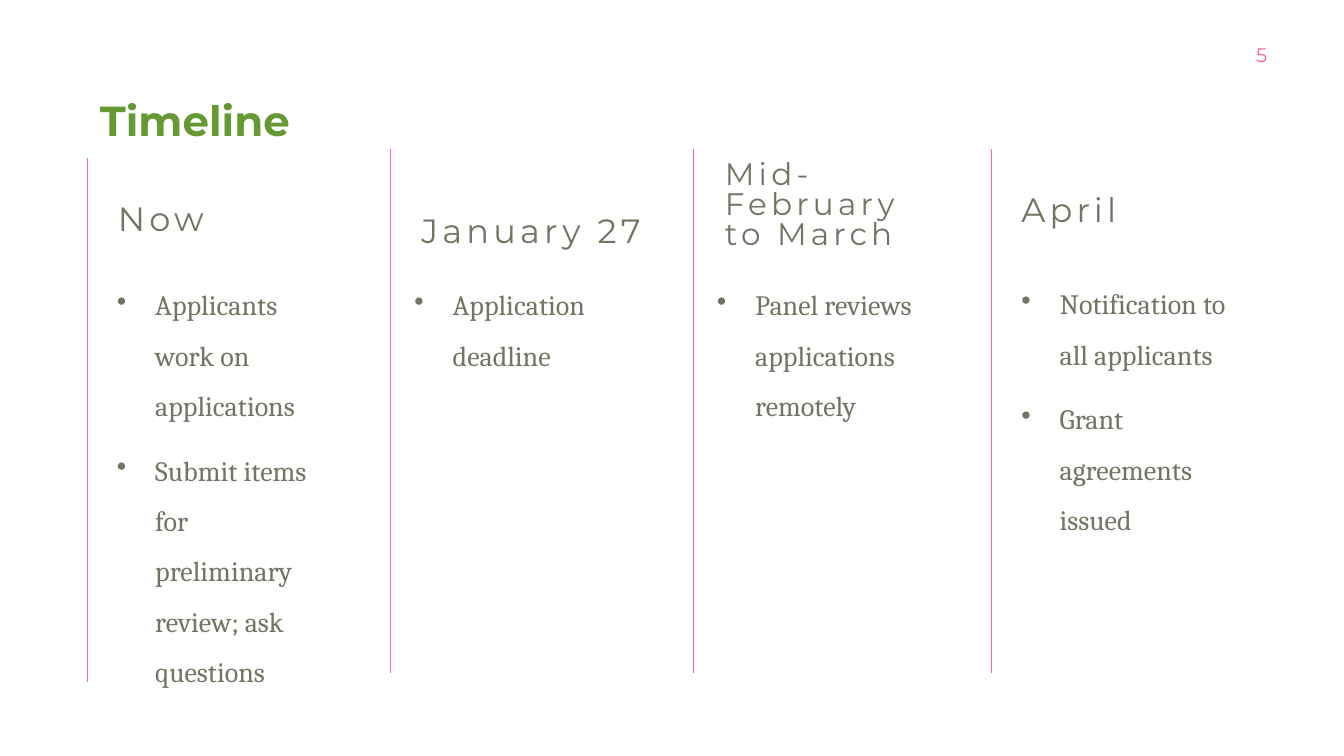
from lxml.etree import SubElement
from pptx import Presentation
from pptx.dml.color import RGBColor
from pptx.enum.shapes import MSO_CONNECTOR
from pptx.enum.text import MSO_ANCHOR, MSO_AUTO_SIZE, PP_ALIGN
from pptx.oxml.ns import qn
from pptx.util import Inches, Pt

GREEN, PINK, ROSE, OLIVE = "669933", "FF6699", "F06698", "747464"
TOP, LIST_TOP, RULE_HEIGHT = 1.48, 2.59, 5.2


def style(paragraph, font, size, color, spacing=None, before=None):
    paragraph.font.name = font
    paragraph.font.size = Pt(size)
    paragraph.font.color.rgb = RGBColor.from_string(color)
    paragraph.line_spacing = spacing
    if before is not None:
        paragraph.space_before = Pt(before)


def add_text(left, top, width, height, inset=(0.2, 0.1)):
    frame = slide.shapes.add_textbox(
        Inches(left), Inches(top), Inches(width), Inches(height)).text_frame
    frame.word_wrap = True
    frame.margin_left = frame.margin_right = Inches(inset[0])
    frame.margin_top = frame.margin_bottom = Inches(inset[1])
    return frame


prs = Presentation()
prs.slide_width, prs.slide_height = Inches(13.33), Inches(7.5)
slide = prs.slides.add_slide(prs.slide_layouts[5])

# Title
title = slide.shapes.title
title.left, title.top = Inches(0.89), Inches(0.49)
title.width, title.height = Inches(11.37), Inches(1.45)
title.text_frame.text = "Timeline"
title.text_frame.auto_size = MSO_AUTO_SIZE.NONE
title.text_frame.vertical_anchor = MSO_ANCHOR.MIDDLE
heading = title.text_frame.paragraphs[0]
heading.alignment = PP_ALIGN.LEFT
heading.font.bold = True
style(heading, "Montserrat", 30, GREEN, 0.9, 0)

# Page number
page = add_text(12.29, 0.38, 0.55, 0.34, (0.1, 0.05))
page.margin_right = Inches(0.2)
page.word_wrap = False
page.text = "5"
page.paragraphs[0].alignment = PP_ALIGN.CENTER
style(page.paragraphs[0], "Montserrat", 14, ROSE)

# Stages: rule (x, y), date (text, x, width, height, size, spacing),
# list (x, y, height, items)
stages = [
    ((0.87, 1.57), ("Now", 0.97, 2.44, 0.9, 24, 0.9),
     (0.96, LIST_TOP, 4.39, ["Applicants work on applications",
                             "Submit items for preliminary review; ask questions"])),
    ((3.87, TOP), ("January 27", 3.98, 2.6, 1.11, 24, 0.9),
     (3.91, LIST_TOP, 3.26, ["Application deadline"])),
    ((6.88, TOP), ("Mid-February to March", 6.99, 2.44, 1.11, 22.2, 0.8),
     (6.91, LIST_TOP, 3.26, ["Panel reviews applications remotely"])),
    ((9.83, TOP), ("April", 9.93, 2.44, 0.9, 24, 0.9),
     (9.93, 2.58, 3.7, ["Notification to all applicants",
                        "Grant agreements issued"])),
]

for (rule_x, rule_y), date_spec, (list_x, list_y, list_height, items) in stages:
    # Vertical rule
    rule = slide.shapes.add_connector(
        MSO_CONNECTOR.STRAIGHT, Inches(rule_x), Inches(rule_y),
        Inches(rule_x), Inches(rule_y + RULE_HEIGHT))
    rule.line.color.rgb = RGBColor.from_string(PINK)
    rule.line.width = Pt(0.5)
    SubElement(rule._element.spPr, qn("a:effectLst"))

    # Date, letter-spaced, standing on the bottom of its box
    wording, date_x, width, height, size, spacing = date_spec
    date = add_text(date_x, rule_y, width, height)
    date.vertical_anchor = MSO_ANCHOR.BOTTOM
    date.text = wording
    style(date.paragraphs[0], "Montserrat", size, OLIVE, spacing, 10)
    date.paragraphs[0].runs[0].font._element.set("spc", "300")

    # Bulleted steps
    steps = add_text(list_x, list_y, 2.49, list_height)
    steps.text = "\n".join(items)
    for step in steps.paragraphs:
        style(step, "Cambria", 20, OLIVE, 1.5, 10)
        properties = step._p.get_or_add_pPr()
        properties.set("marL", str(Inches(0.38)))
        properties.set("indent", str(-Inches(0.38)))
        bullet = SubElement(properties, qn("a:buChar"), char="•")
        properties.find(qn("a:defRPr")).addprevious(bullet)

prs.save("out.pptx")
